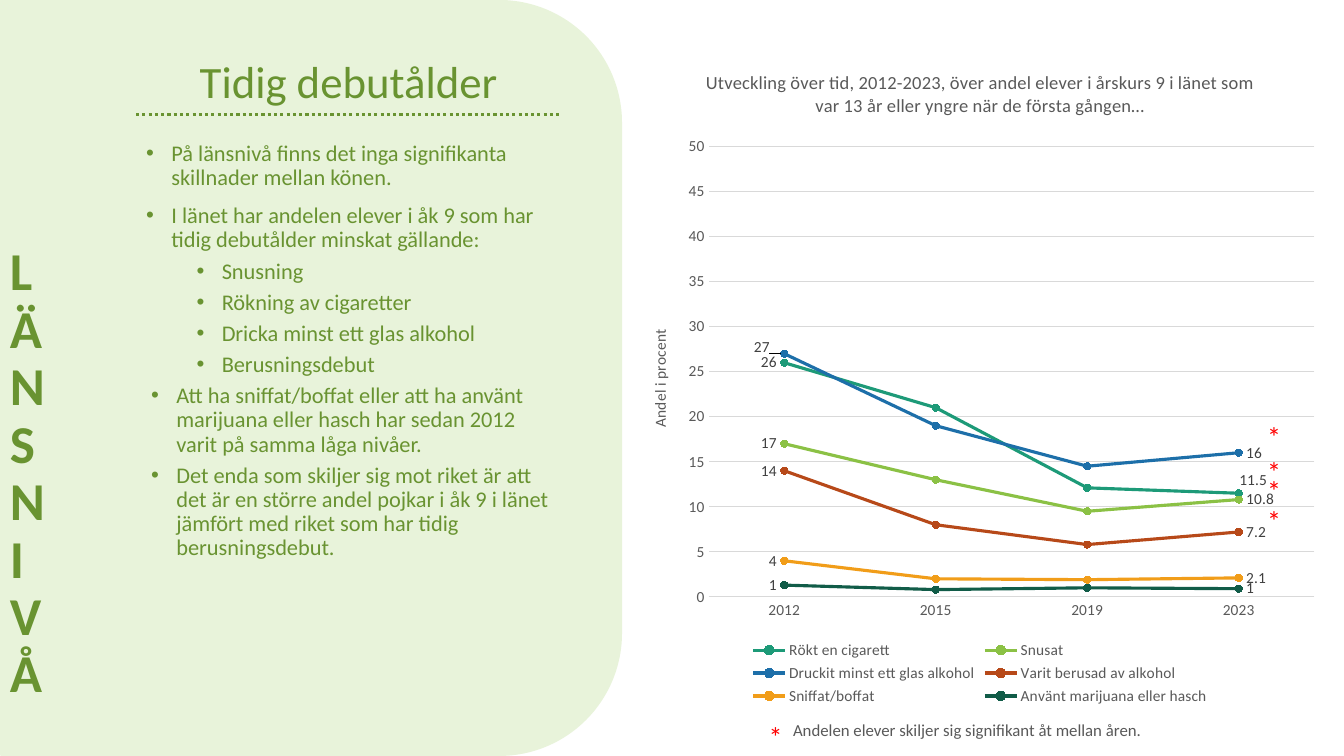
from dataclasses import dataclass
from typing import Optional

from pptx import Presentation
from pptx.chart.data import CategoryChartData
from pptx.dml.color import RGBColor
from pptx.enum.chart import XL_CHART_TYPE as ChartType, XL_LABEL_POSITION as LabelPosition
from pptx.enum.chart import XL_LEGEND_POSITION as LegendPosition, XL_MARKER_STYLE as MarkerStyle
from pptx.enum.chart import XL_TICK_MARK as TickMark
from pptx.enum.dml import MSO_LINE as Dash
from pptx.enum.shapes import MSO_CONNECTOR as Connector, MSO_SHAPE as Shape
from pptx.enum.text import MSO_ANCHOR as Anchor, MSO_AUTO_SIZE as AutoSize, PP_ALIGN as Align
from pptx.oxml import parse_xml
from pptx.oxml.ns import nsdecls, qn
from pptx.util import Pt

FONT = "Calibri"
COLORS = {
    "panel": "E8F3DA", "green": "699331", "gray": "595959", "label": "404040",
    "grid": "D9D9D9", "red": "FF0000",
}
LABEL_POSITIONS = {0: LabelPosition.LEFT, 3: LabelPosition.RIGHT}


@dataclass
class Trend:
    name: str
    values: tuple
    color: str
    number_format: str = "General"
    moved_point: Optional[int] = None
    shift: tuple = (0, 0)


@dataclass
class Bullet:
    text: str
    level: int
    indent: float
    before: float


@dataclass
class Note:
    text: str
    left: float
    top: float
    width: float
    height: float
    size: float
    color: str


TRENDS = [
    Trend("Rökt en cigarett", (26, 21, 12.1, 11.5), "1D9A78", moved_point=3, shift=(-0.01, -0.02)),
    Trend("Snusat", (17, 13, 9.5, 10.8), "8BC145"),
    Trend("Druckit minst ett glas alkohol", (27, 19, 14.5, 16), "1D6FA9",
          moved_point=0, shift=(-0.01, -0.01)),
    Trend("Varit berusad av alkohol", (14, 8, 5.8, 7.2), "B74919"),
    Trend("Sniffat/boffat", (4, 2, 1.9, 2.1), "F19D19"),
    Trend("Använt marijuana eller hasch", (1.3, 0.8, 1, 0.9), "115C48", number_format="0"),
]
BULLETS = [
    Bullet("På länsnivå finns det inga signifikanta skillnader mellan könen.", 0, 18, 10),
    Bullet("I länet har andelen elever i åk 9 som har tidig debutålder minskat gällande:", 0, 18, 10),
    Bullet("Snusning", 1, 54, 5),
    Bullet("Rökning av cigaretter", 1, 54, 5),
    Bullet("Dricka minst ett glas alkohol", 1, 54, 5),
    Bullet("Berusningsdebut", 1, 54, 5),
    Bullet("Att ha sniffat/boffat eller att ha använt marijuana eller hasch har sedan 2012 "
           "varit på samma låga nivåer.", 1, 21.6, 5),
    Bullet("Det enda som skiljer sig mot riket är att det är en större andel pojkar i åk 9 i länet "
           "jämfört med riket som har tidig berusningsdebut.", 1, 21.6, 5),
]
STAR_PLACES = [(898, 334.8), (898, 321.1), (898, 296), (898, 356.4), (542, 510.5)]
NOTES = [Note("*", left, top, 36, 49.7, 20, COLORS["red"]) for left, top in STAR_PLACES]
NOTES.append(Note("Andelen elever skiljer sig signifikant åt mellan åren.",
                  559.4, 510.5, 339, 21.6, 12, COLORS["gray"]))


def rgb(color: str) -> RGBColor:
    return RGBColor.from_string(color)


def format_font(font, *, size: float, color: str, bold: bool = False) -> None:
    font.name, font.size, font.bold = FONT, Pt(size), bold
    font.color.rgb = rgb(color)


def write(para, text: str, *, size: float, color: str, bold: bool = False,
          align=None, spacing=None, before=None) -> None:
    span = para.add_run()
    span.text = text
    format_font(span.font, size=size, color=color, bold=bold)
    para.alignment = align
    if spacing is not None:
        para.line_spacing = spacing
    if before is not None:
        para.space_before = Pt(before)


def place(box, left: float, top: float, width: float, height: float) -> None:
    box.left, box.top, box.width, box.height = Pt(left), Pt(top), Pt(width), Pt(height)


def manual_layout(x: float, y: float, size: Optional[tuple] = None):
    fields = [("x", x), ("y", y)]
    modes = ""
    if size:
        modes = '<c:xMode val="edge"/><c:yMode val="edge"/>'
        fields += [("w", size[0]), ("h", size[1])]
    values = "".join(f'<c:{name} val="{value}"/>' for name, value in fields)
    return parse_xml(f'<c:layout {nsdecls("c")}><c:manualLayout>{modes}{values}'
                     '</c:manualLayout></c:layout>')


def format_series(series, trend: Trend) -> None:
    color = rgb(trend.color)
    series.smooth = False
    series.format.line.color.rgb = color
    series.format.line.width = Pt(2.25)
    series.marker.style, series.marker.size = MarkerStyle.CIRCLE, 5
    series.marker.format.fill.solid()
    series.marker.format.fill.fore_color.rgb = color
    series.marker.format.line.color.rgb = color
    series.data_labels.show_value = False
    for index, position in LABEL_POSITIONS.items():
        label = series.points[index].data_label
        format_font(label.font, size=11, color=COLORS["label"])
        label.position = position
    for element in series._element.iter(qn("c:dLbl")):
        marker = element.find(qn("c:idx"))
        marker.addnext(parse_xml(f'<c:numFmt {nsdecls("c")} formatCode="{trend.number_format}" '
                                 'sourceLinked="0"/>'))
        if int(marker.get("val")) == trend.moved_point:
            marker.addnext(manual_layout(*trend.shift))


def add_trend_chart(page) -> None:
    data = CategoryChartData()
    data.categories = ["2012", "2015", "2019", "2023"]
    for trend in TRENDS:
        data.add_series(trend.name, trend.values)
    chart = page.shapes.add_chart(ChartType.LINE_MARKERS, Pt(451.4), Pt(33.8),
                                  Pt(497.5), Pt(473), data).chart
    format_font(chart.font, size=11, color=COLORS["gray"])
    chart.has_title = True
    write(chart.chart_title.text_frame.paragraphs[0],
          "Utveckling över tid, 2012-2023, över andel elever i årskurs 9 i länet som "
          "var 13 år eller yngre när de första gången…", size=13.2, color=COLORS["gray"])
    chart.chart_title.include_in_layout = False

    years, percent = chart.category_axis, chart.value_axis
    for axis in (years, percent):
        axis.major_tick_mark = axis.minor_tick_mark = TickMark.NONE
        format_font(axis.tick_labels.font, size=11, color=COLORS["gray"])
    percent.minimum_scale, percent.maximum_scale, percent.major_unit = 0, 50, 5
    percent.has_major_gridlines = True
    for line in (years.format.line, percent.major_gridlines.format.line):
        line.color.rgb, line.width = rgb(COLORS["grid"]), Pt(0.75)
    percent.format.line.fill.background()
    write(percent.axis_title.text_frame.paragraphs[0], "Andel i procent",
          size=11, color=COLORS["gray"])

    plot = chart.plots[0]
    plot.vary_by_categories = False
    for series, trend in zip(plot.series, TRENDS):
        format_series(series, trend)

    chart.has_legend = True
    chart.legend.position = LegendPosition.BOTTOM
    chart.legend.include_in_layout = False
    format_font(chart.legend.font, size=11, color=COLORS["gray"])
    chart.legend._element.find(qn("c:legendPos")).addnext(manual_layout(0.16, 0.89, (0.68, 0.11)))
    area = chart._chartSpace.chart.plotArea
    for old_layout in area.findall(qn("c:layout")):
        area.remove(old_layout)
    frame = manual_layout(0.11, 0.15, (0.87, 0.68))
    frame[0].insert(0, parse_xml(f'<c:layoutTarget {nsdecls("c")} val="inner"/>'))
    area.insert(0, frame)


def fill_body(body) -> None:
    place(body, 97.2, 97.9, 302.4, 374.4)
    body.fill.solid()
    body.fill.fore_color.rgb = rgb(COLORS["panel"])
    frame = body.text_frame
    frame.auto_size = AutoSize.NONE
    for index, bullet in enumerate(BULLETS):
        para = frame.add_paragraph() if index else frame.paragraphs[0]
        para.level = bullet.level
        write(para, bullet.text, size=16, color=COLORS["green"], align=Align.LEFT,
              spacing=0.9, before=bullet.before)
        properties = para._p.get_or_add_pPr()
        properties.set("marL", str(Pt(bullet.indent)))
        properties.set("indent", str(Pt(-18)))
        for mark in ('buFont {} typeface="Arial"', 'buChar {} char="•"'):
            properties.append(parse_xml(f'<a:{mark.format(nsdecls("a"))}/>'))


def add_note(page, note: Note) -> None:
    box = page.shapes.add_textbox(Pt(note.left), Pt(note.top), Pt(note.width), Pt(note.height))
    box.text_frame.word_wrap = True
    write(box.text_frame.paragraphs[0], note.text, size=note.size, color=note.color)


def main() -> None:
    deck = Presentation()
    deck.slide_width, deck.slide_height = Pt(960), Pt(540)
    page = deck.slides.add_slide(deck.slide_layouts[1])
    title, body = page.shapes.title, page.placeholders[1]

    panel = page.shapes.add_shape(Shape.ROUNDED_RECTANGLE, Pt(-82), Pt(0), Pt(526.3), Pt(540))
    panel.shadow.inherit = False
    panel.fill.solid()
    panel.fill.fore_color.rgb = rgb(COLORS["panel"])
    panel.line.fill.background()
    add_trend_chart(page)

    level = page.shapes.add_textbox(Pt(0), Pt(33.8), Pt(75.6), Pt(473))
    level.text_frame.word_wrap = True
    level.text_frame.vertical_anchor = Anchor.BOTTOM
    level.text_frame._txBody.bodyPr.set("vert", "wordArtVert")
    write(level.text_frame.paragraphs[0], "LÄNSNIVÅ", size=38, color=COLORS["green"],
          bold=True, spacing=0.9)

    fill_body(body)
    place(title, 90, 10, 318.2, 70.6)
    title.text_frame.auto_size = AutoSize.NONE
    title.text_frame.vertical_anchor = Anchor.BOTTOM
    write(title.text_frame.paragraphs[0], "Tidig debutålder", size=32, color=COLORS["green"],
          align=Align.CENTER, spacing=0.9)
    for placeholder in (body, title):
        page.shapes._spTree.append(placeholder._element)

    rule = page.shapes.add_connector(Connector.STRAIGHT, Pt(97.2), Pt(82), Pt(400.3), Pt(82))
    rule.line.color.rgb, rule.line.width = rgb(COLORS["green"]), Pt(2.25)
    rule.line.dash_style = Dash.ROUND_DOT
    rule._element.spPr.append(parse_xml(f'<a:effectLst {nsdecls("a")}/>'))
    for note in NOTES:
        add_note(page, note)
    deck.save("out.pptx")


if __name__ == "__main__":
    main()
